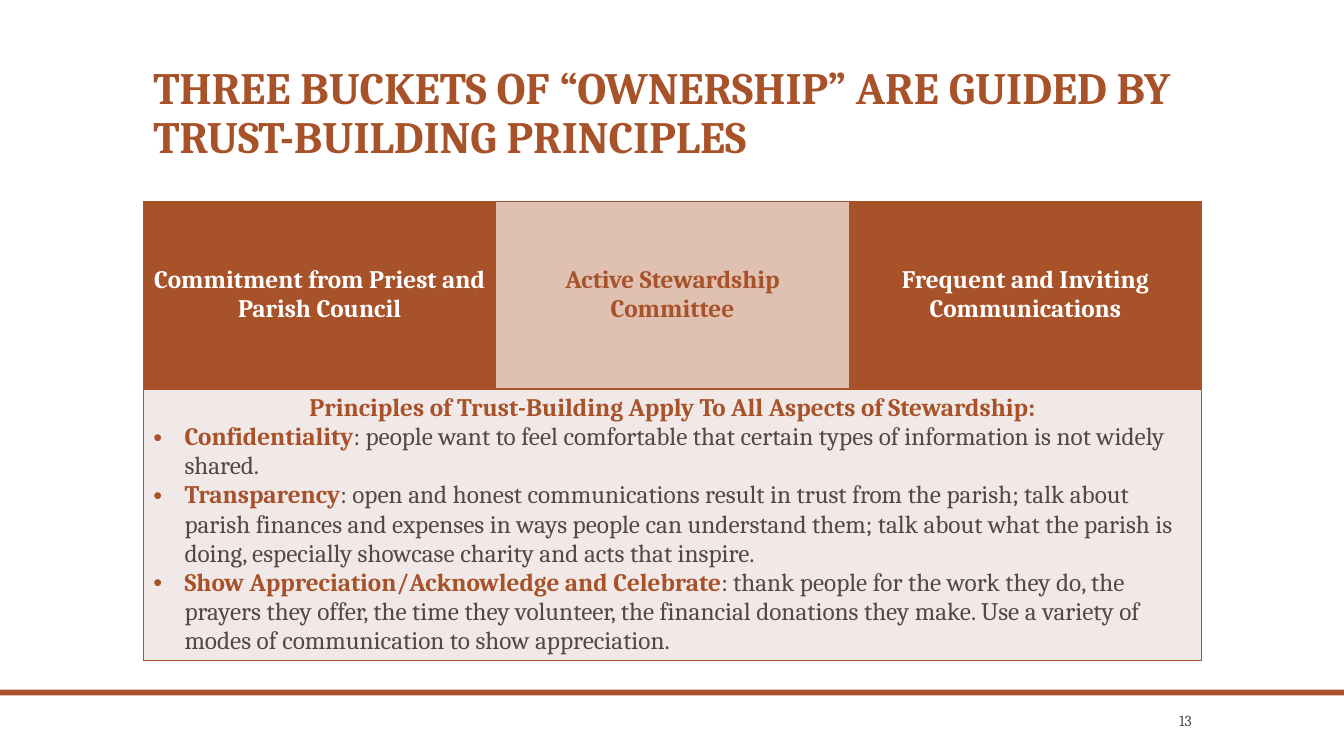
from lxml import etree
from pptx import Presentation
from pptx import util as u
from pptx.dml.color import RGBColor
from pptx.enum import shapes, text
from pptx.oxml import ns

RUST = RGBColor(0xA8, 0x52, 0x29)
BLUSH = RGBColor(0xF1, 0xE9, 0xE8)
BROWN = RGBColor(0x51, 0x4A, 0x40)
WHITE = RGBColor(0xFF, 0xFF, 0xFF)
PLAIN_TABLE = "{2D5ABB26-0587-4C30-8999-92F81FD0307C}"

BUCKETS = [  # label, text colour, fill opacity in percent, bordered edges
    ("Commitment from Priest and Parish Council", WHITE, 100, "LTB"),
    ("Active Stewardship Committee", RUST, 36, "TB"),
    ("Frequent and Inviting Communications", WHITE, 100, "RTB"),
]
PRINCIPLES_HEADING = "Principles of Trust-Building Apply To All Aspects of Stewardship:"
PRINCIPLES = [
    ("Confidentiality", ": people want to feel comfortable that certain types of "
     "information is not widely shared."),
    ("Transparency", ": open and honest communications result in trust from the parish; "
     "talk about parish finances and expenses in ways people can understand them; talk "
     "about what the parish is doing, especially showcase charity and acts that inspire."),
    ("Show Appreciation/Acknowledge and Celebrate", ": thank people for the work they do, "
     "the prayers they offer, the time they volunteer, the financial donations they make. "
     "Use a variety of modes of communication to show appreciation."),
]


def add_xml(parent, tag, **attributes):
    return etree.SubElement(parent, ns.qn(tag), attributes)


class Deck:
    """Three columns between the margins, ninety rows down the slide."""
    font_name = "Cambria"
    margin = u.Inches(1.42)
    column = u.Inches(3.5)

    def __init__(self):
        self.prs = Presentation()
        self.prs.slide_width, self.prs.slide_height = u.Inches(13.33), u.Inches(7.5)
        self.row = self.prs.slide_height / 90
        self.slide = self.prs.slides.add_slide(self.prs.slide_layouts[5])

    def area(self, column, row, columns, rows):
        return (int(self.margin + column * self.column), int(row * self.row),
                int(columns * self.column), int(rows * self.row))

    def style(self, font, size, color, bold=False):
        font.name, font.size, font.bold = self.font_name, u.Pt(size), bold
        font.color.rgb = color

    def title(self, words, *place):
        title = self.slide.shapes.title
        title.left, title.top, title.width, title.height = self.area(*place)
        frame = title.text_frame
        frame.text, frame.word_wrap = words, True
        frame.auto_size = text.MSO_AUTO_SIZE.NONE
        frame.vertical_anchor = text.MSO_ANCHOR.BOTTOM
        heading = frame.paragraphs[0]
        heading.alignment, heading.line_spacing = text.PP_ALIGN.LEFT, 0.9
        self.style(heading.font, 32, RUST, True)

    def rule(self, row, rows):
        rule = self.slide.shapes.add_shape(
            shapes.MSO_SHAPE.RECTANGLE, 0, int(row * self.row),
            self.prs.slide_width, int(rows * self.row))
        rule.shadow.inherit = False
        rule.fill.solid()
        rule.fill.fore_color.rgb = RUST
        rule.line.fill.background()

    def page_number(self, number, *place):
        frame = self.slide.shapes.add_textbox(*self.area(*place)).text_frame
        frame.text, frame.word_wrap = number, True
        frame.vertical_anchor = text.MSO_ANCHOR.MIDDLE
        frame.paragraphs[0].alignment = text.PP_ALIGN.RIGHT
        self.style(frame.paragraphs[0].font, 11, BROWN)

    def table(self, row_heights, *place):
        frame = self.slide.shapes.add_table(len(row_heights), 3, *self.area(*place))
        table = frame.table
        table.first_row = table.horz_banding = False
        frame._element.find(".//" + ns.qn("a:tableStyleId")).text = PLAIN_TABLE
        for row, height in zip(table.rows, row_heights):
            row.height = int(height * self.row)
        return table

    def cell(self, cell, fill, edges, opacity=100):
        properties = cell._tc.get_or_add_tcPr()
        for edge in edges:
            line = add_xml(properties, "a:ln" + edge, w=str(u.Pt(1)))
            add_xml(add_xml(line, "a:solidFill"), "a:srgbClr", val=str(RUST))
        cell.fill.solid()
        cell.fill.fore_color.rgb = fill
        if opacity < 100:
            color = properties.find(ns.qn("a:solidFill"))[0]
            add_xml(color, "a:alpha", val=str(opacity * 1000))

    def label(self, cell, words, color):
        cell.text = words
        label = cell.text_frame.paragraphs[0]
        label.alignment = text.PP_ALIGN.CENTER
        self.style(label.font, 18, color, True)

    def bullet(self, frame, term, explanation):
        item = frame.add_paragraph()
        properties = item._p.get_or_add_pPr()
        indent = u.Inches(0.31)
        properties.set("marL", str(indent))
        properties.set("indent", str(-indent))
        add_xml(add_xml(properties, "a:buClr"), "a:srgbClr", val=str(RUST))
        add_xml(properties, "a:buFont", typeface="Arial")
        add_xml(properties, "a:buChar", char="•")
        for words, color, bold in ((term, RUST, True), (explanation, BROWN, False)):
            run = item.add_run()
            run.text = words
            self.style(run.font, 18, color, bold)


def main():
    deck = Deck()
    deck.rule(82.1, 0.7)
    deck.title("THREE BUCKETS OF “OWNERSHIP” ARE GUIDED BY TRUST-BUILDING PRINCIPLES",
               0, 5, 3, 15)

    # Three buckets across the top row
    heights = (22.3, 32.3)
    table = deck.table(heights, 0, 24, 3, sum(heights))
    for index, (words, color, opacity, edges) in enumerate(BUCKETS):
        bucket = table.cell(0, index)
        deck.cell(bucket, RUST, edges, opacity)
        deck.label(bucket, words, color)
        bucket.vertical_anchor = text.MSO_ANCHOR.MIDDLE

    # Principles spanning all three columns
    principles = table.cell(1, 0)
    principles.merge(table.cell(1, 2))
    for index in range(3):
        deck.cell(table.cell(1, index), BLUSH, "LRTB")
    deck.label(principles, PRINCIPLES_HEADING, RUST)
    for term, explanation in PRINCIPLES:
        deck.bullet(principles.text_frame, term, explanation)

    deck.page_number("13", 2.78, 84.2, 0.22, 3.1)
    deck.prs.save("out.pptx")


if __name__ == "__main__":
    main()
